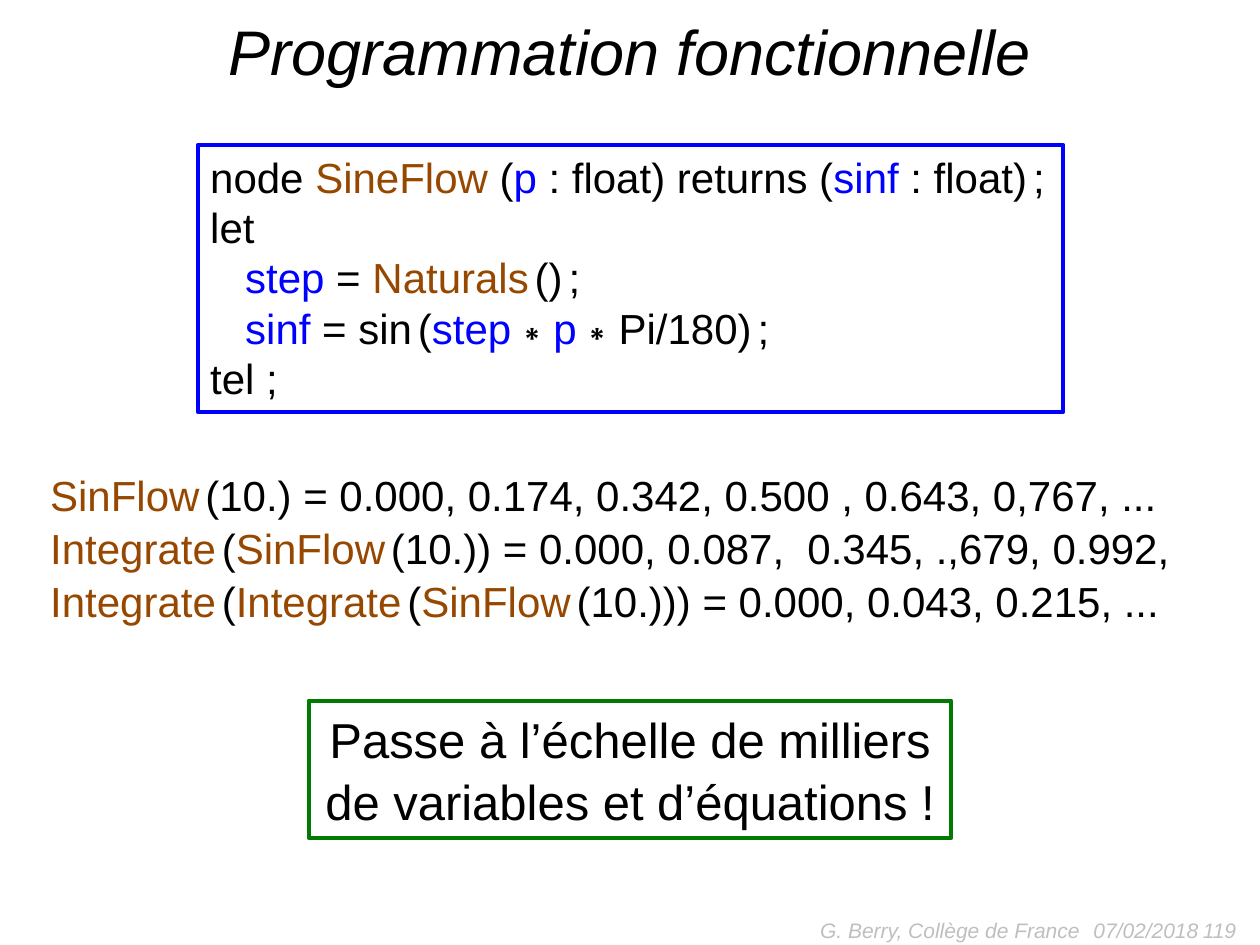
from pptx import Presentation
from pptx.dml.color import RGBColor
from pptx.enum.shapes import MSO_SHAPE
from pptx.enum.text import MSO_ANCHOR, PP_ALIGN
from pptx.util import Inches, Pt

RECTANGLE = MSO_SHAPE.RECTANGLE
TOP, MIDDLE = MSO_ANCHOR.TOP, MSO_ANCHOR.MIDDLE
LEFT, CENTER, RIGHT = PP_ALIGN.LEFT, PP_ALIGN.CENTER, PP_ALIGN.RIGHT

BLACK, BLUE, BROWN = "000000", "0000FF", "964700"
GREEN, GRAY = "007A00", "BFBFBF"
THIN_SPACE = (" ", BLACK, 12)


def color(value):
    return RGBColor.from_string(value)


def variable(name):
    return name, BLUE


def function(name):
    return name, BROWN


class SlideBuilder:
    font_name = "Arial"
    line_width = Pt(2.25)

    def __init__(self, page):
        self.page = page

    def fill_text(self, shape, lines, size, tint=BLACK, italic=False, align=LEFT,
                  anchor=TOP, spacing=1.0, wrap=True):
        """Fill a shape; a span is a string or (text, colour[, size])."""
        frame = shape.text_frame
        for name, value in {"word_wrap": wrap, "vertical_anchor": anchor}.items():
            setattr(frame, name, value)
        for index, line in enumerate(lines):
            para = frame.add_paragraph() if index else frame.paragraphs[0]
            for name, value in {"alignment": align, "line_spacing": spacing}.items():
                setattr(para, name, value)
            for part in line:
                if isinstance(part, str):
                    part = (part, tint)
                text, span_color, span_size = (*part, size)[:3]
                span = para.add_run()
                span.text = text
                font_values = {"name": self.font_name, "size": Pt(span_size),
                               "italic": italic}
                for name, value in font_values.items():
                    setattr(span.font, name, value)
                span.font.color.rgb = color(span_color)

    def text(self, position, lines, size, **style):
        box = self.page.shapes.add_textbox(*map(Inches, position))
        self.fill_text(box, lines, size, **style)

    def frame(self, position, border, lines, size, **style):
        box = self.page.shapes.add_shape(RECTANGLE, *map(Inches, position))
        box.shadow.inherit = False
        box.fill.background()
        box.line.color.rgb = color(border)
        box.line.width = self.line_width
        self.fill_text(box, lines, size, **style)


CODE = [
    ["node ", function("SineFlow"), " (", variable("p"), " : float) returns (",
     variable("sinf"), " : float)", THIN_SPACE, ";"],
    ["let"],
    ["   ", variable("step"), " = ", function("Naturals"), THIN_SPACE, "()",
     THIN_SPACE, ";"],
    ["   ", variable("sinf"), " = sin", THIN_SPACE, "(", variable("step"), "∗",
     variable("p"), "∗Pi/180)", THIN_SPACE, ";"],
    ["tel ;"],
]

SIN_FLOW = [function("SinFlow"), THIN_SPACE]
INTEGRATE = [function("Integrate"), THIN_SPACE, "("]
RESULTS = [
    [*SIN_FLOW, "(10.) = 0.000, 0.174, 0.342, 0.500 , 0.643, 0,767, ..."],
    [*INTEGRATE, *SIN_FLOW, "(10.)) = 0.000, 0.087,  0.345, .,679, 0.992,"],
    [*INTEGRATE, *INTEGRATE, *SIN_FLOW, "(10.))) = 0.000, 0.043, 0.215, ..."],
]

CONCLUSION = [["Passe à l’échelle de milliers"], ["de variables et d’équations !"]]

FOOTERS = [
    (8.58, 2.33, "07/02/2018", LEFT),
    (7.58, 2.33, "119", RIGHT),
    (5.5, 3.17, "G. Berry, Collège de France", RIGHT),
]


def main():
    deck = Presentation()
    deck.slide_width, deck.slide_height = Inches(10), Inches(7.5)
    builder = SlideBuilder(deck.slides.add_slide(deck.slide_layouts[6]))

    for left, width, label, align in FOOTERS:
        builder.text((left, 7.18, width, 0.4), [[label]], 12, tint=GRAY,
                     italic=True, align=align, anchor=MIDDLE)
    builder.text((0.25, 0.05, 9.5, 0.71), [["Programmation fonctionnelle"]], 36,
                 italic=True, align=CENTER)
    builder.frame((1.57, 1.15, 6.87, 2.12), BLUE, CODE, 24)
    builder.frame((2.45, 5.56, 5.1, 1.09), GREEN, CONCLUSION, 28,
                  align=CENTER, spacing=1.05, wrap=False)
    builder.text((0.3, 3.66, 9.4, 1.8), RESULTS, 24, spacing=1.05)

    deck.save("out.pptx")


if __name__ == "__main__":
    main()
